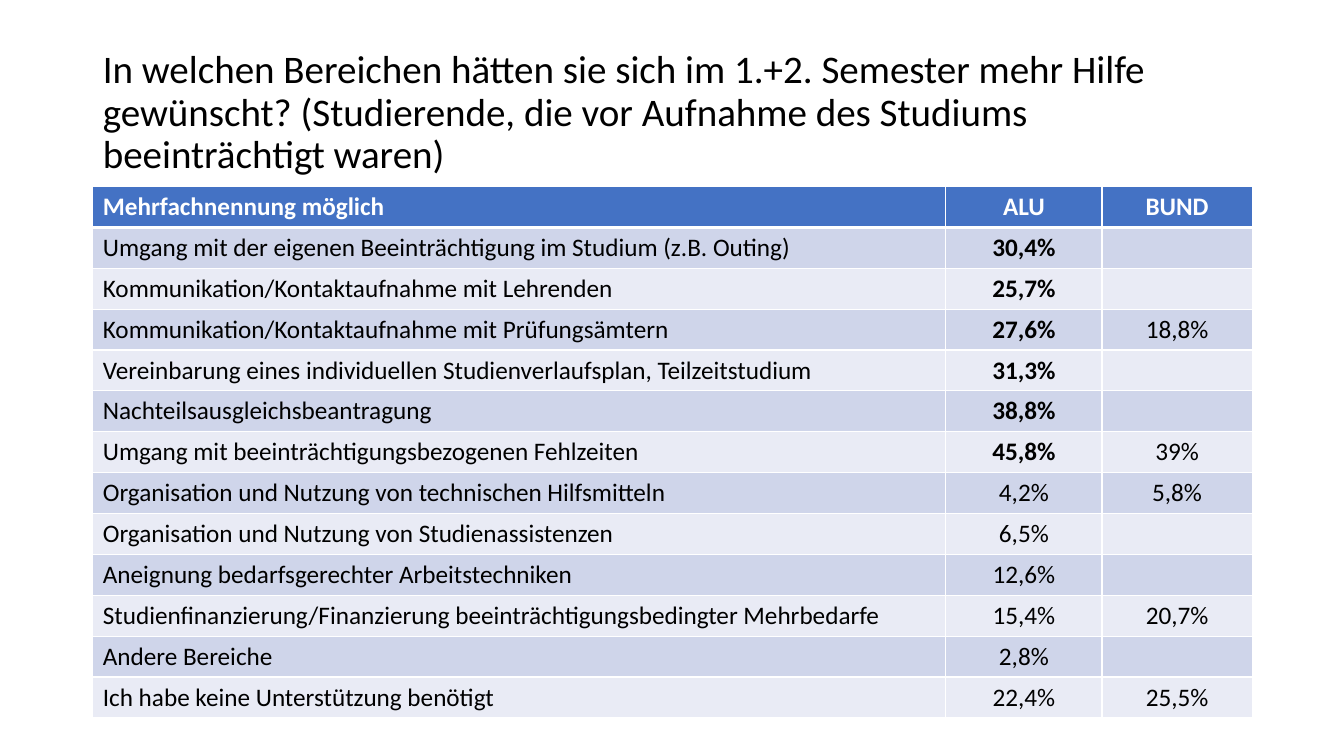
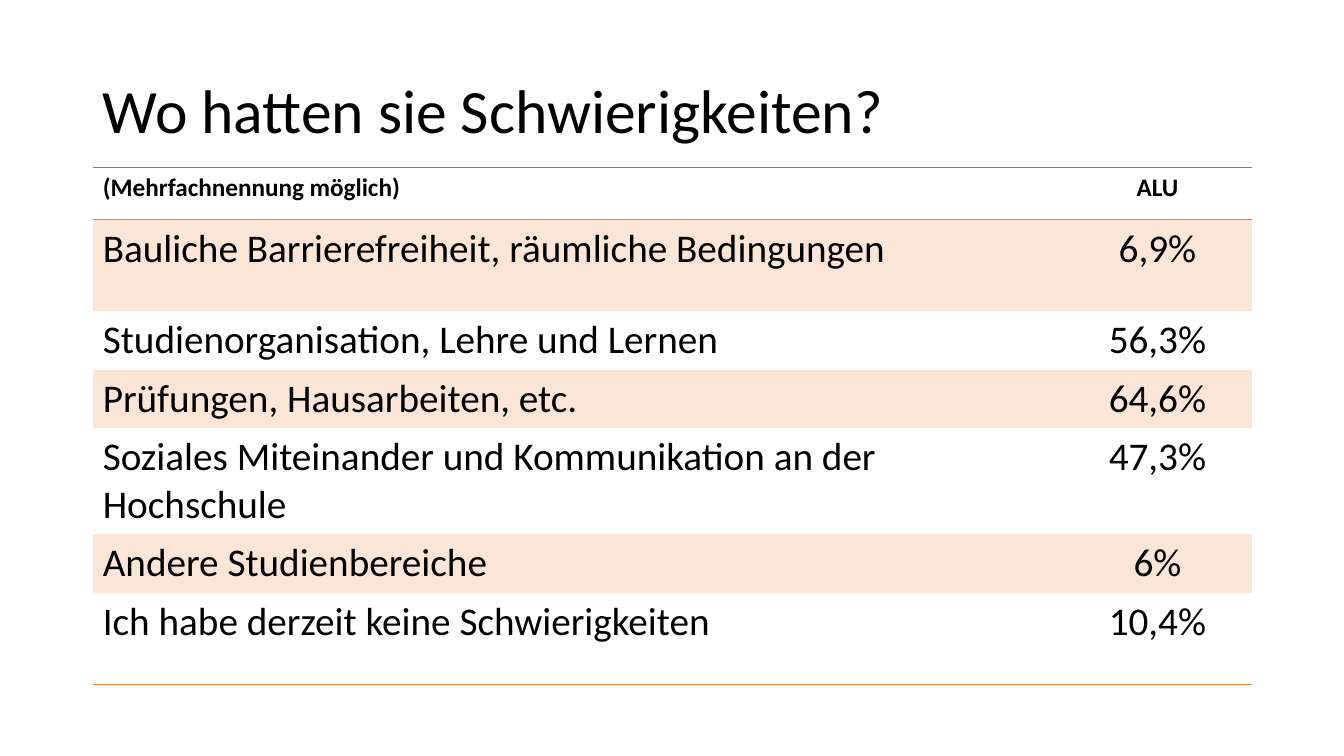
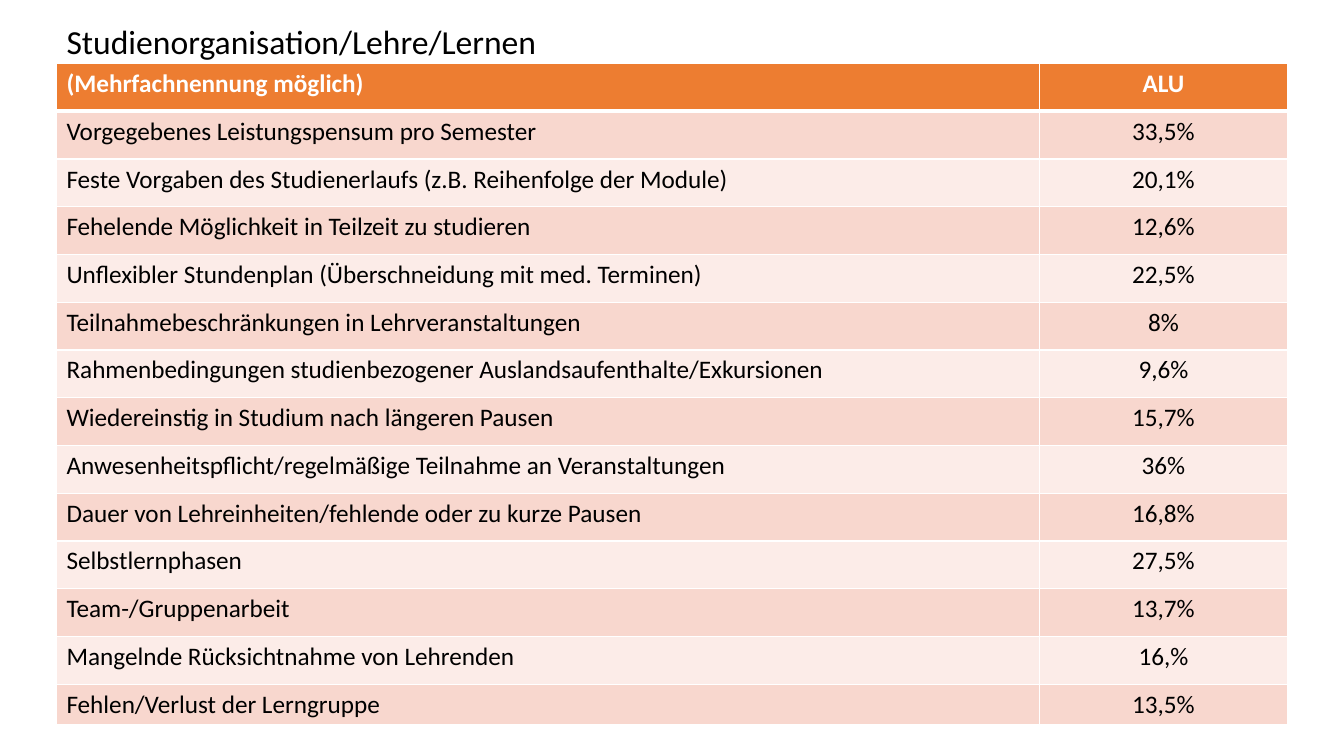
from lxml.etree import SubElement
from pptx import Presentation
from pptx.dml.color import RGBColor
from pptx.enum.text import MSO_ANCHOR, MSO_AUTO_SIZE, PP_ALIGN
from pptx.oxml.ns import qn
from pptx.util import Emu, Pt

EMU_PER_PX = 9144
FONT = "Calibri"
BLACK, WHITE, BLUE, ORANGE, GRAY = "000000", "FFFFFF", "4472C4", "ED7D31", "808080"
PLAIN_TABLE_STYLE = "{2D5ABB26-0587-4C30-8999-92F81FD0307C}"
SIDES = ("L", "R", "T", "B")

BLUE_GRID = {"header_fill": BLUE, "header_color": WHITE, "bands": ("CFD5EA", "E9EBF5"),
             "body_size": 18, "ruled": False}
ORANGE_GRID = {**BLUE_GRID, "header_fill": ORANGE, "bands": ("F8D7CE", "FCECE8")}
ORANGE_RULED = {"header_fill": None, "header_color": BLACK, "bands": ("FBE5D6", None),
                "body_size": 28, "ruled": True}

HELP_ROWS = [
    ("Mehrfachnennung möglich", "ALU", "BUND"),
    ("Umgang mit der eigenen Beeinträchtigung im Studium (z.B. Outing)", "30,4%", ""),
    ("Kommunikation/Kontaktaufnahme mit Lehrenden", "25,7%", ""),
    ("Kommunikation/Kontaktaufnahme mit Prüfungsämtern", "27,6%", "18,8%"),
    ("Vereinbarung eines individuellen Studienverlaufsplan, Teilzeitstudium", "31,3%", ""),
    ("Nachteilsausgleichsbeantragung", "38,8%", ""),
    ("Umgang mit beeinträchtigungsbezogenen Fehlzeiten", "45,8%", "39%"),
    ("Organisation und Nutzung von technischen Hilfsmitteln", "4,2%", "5,8%"),
    ("Organisation und Nutzung von Studienassistenzen", "6,5%", ""),
    ("Aneignung bedarfsgerechter Arbeitstechniken", "12,6%", ""),
    ("Studienfinanzierung/Finanzierung beeinträchtigungsbedingter Mehrbedarfe", "15,4%", "20,7%"),
    ("Andere Bereiche", "2,8%", ""),
    ("Ich habe keine Unterstützung benötigt", "22,4%", "25,5%"),
]
DIFFICULTY_ROWS = [
    ("(Mehrfachnennung möglich)", "ALU"),
    ("Bauliche Barrierefreiheit, räumliche Bedingungen", "6,9%"),
    ("Studienorganisation, Lehre und Lernen", "56,3%"),
    ("Prüfungen, Hausarbeiten, etc.", "64,6%"),
    ("Soziales Miteinander und Kommunikation an der Hochschule", "47,3%"),
    ("Andere Studienbereiche", "6%"),
    ("Ich habe derzeit keine Schwierigkeiten", "10,4%"),
]
ORGANISATION_ROWS = [
    ("(Mehrfachnennung möglich)", "ALU"),
    ("Vorgegebenes Leistungspensum pro Semester", "33,5%"),
    ("Feste Vorgaben des Studienerlaufs (z.B. Reihenfolge der Module)", "20,1%"),
    ("Fehelende Möglichkeit in Teilzeit zu studieren", "12,6%"),
    ("Unflexibler Stundenplan (Überschneidung mit med. Terminen)", "22,5%"),
    ("Teilnahmebeschränkungen in Lehrveranstaltungen", "8%"),
    ("Rahmenbedingungen studienbezogener Auslandsaufenthalte/Exkursionen", "9,6%"),
    ("Wiedereinstig in Studium nach längeren Pausen", "15,7%"),
    ("Anwesenheitspflicht/regelmäßige Teilnahme an Veranstaltungen", "36%"),
    ("Dauer von Lehreinheiten/fehlende oder zu kurze Pausen", "16,8%"),
    ("Selbstlernphasen", "27,5%"),
    ("Team-/Gruppenarbeit", "13,7%"),
    ("Mangelnde Rücksichtnahme von Lehrenden", "16,%"),
    ("Fehlen/Verlust der Lerngruppe", "13,5%"),
]


def px(length):
    return Emu(round(length * EMU_PER_PX))


def color(hex_string):
    return RGBColor.from_string(hex_string)


def set_attributes(target, values):
    for name, value in values.items():
        setattr(target, name, value)


def format_font(font, size, hex_string, bold=False):
    set_attributes(font, {"name": FONT, "size": Pt(size), "bold": bold})
    font.color.rgb = color(hex_string)


def place_title(slide, text, box, size):
    title = slide.shapes.title
    set_attributes(title, dict(zip(("left", "top", "width", "height"), map(px, box))))
    frame = title.text_frame
    set_attributes(frame, {"text": text, "word_wrap": True, "auto_size": MSO_AUTO_SIZE.NONE,
                           "vertical_anchor": MSO_ANCHOR.MIDDLE})
    paragraph = frame.paragraphs[0]
    set_attributes(paragraph, {"alignment": PP_ALIGN.LEFT, "line_spacing": 0.9})
    format_font(paragraph.runs[0].font, size, BLACK)


def cell_borders(row, last_row, ruled):
    if ruled:
        borders = {}
        if row == 0:
            borders["T"] = (GRAY, 0.75)
        if row == 1:
            borders["T"] = (ORANGE, 1)
        if row in (0, last_row):
            borders["B"] = (ORANGE, 1)
        return borders
    borders = dict.fromkeys(SIDES, (WHITE, 1))
    if row < 2:
        borders["B" if row == 0 else "T"] = (WHITE, 3)
    return borders


def draw_borders(cell, borders):
    properties = cell._tc.get_or_add_tcPr()
    for position, side in enumerate(SIDES):
        hex_string, width = borders.get(side, (None, 0))
        line = SubElement(properties, qn(f"a:ln{side}"), w=str(int(Pt(width))))
        properties.insert(position, line)
        if hex_string:
            fill = SubElement(line, qn("a:solidFill"))
            SubElement(fill, qn("a:srgbClr"), val=hex_string)
        else:
            SubElement(line, qn("a:noFill"))


def fill_cell(cell, hex_string):
    if hex_string:
        cell.fill.solid()
        cell.fill.fore_color.rgb = color(hex_string)
    else:
        cell.fill.background()


def place_table(slide, rows, origin, columns, heights, look, bold_rows=0):
    shape = slide.shapes.add_table(len(rows), len(columns), *map(px, origin),
                                   px(sum(columns)), px(sum(heights)))
    table = shape.table
    table._tbl.tblPr.find(qn("a:tableStyleId")).text = PLAIN_TABLE_STYLE
    table.horz_banding = False
    for column, width in zip(table.columns, columns):
        column.width = px(width)
    for row, (texts, height) in enumerate(zip(rows, heights)):
        table.rows[row].height = px(height)
        header = row == 0
        background = look["header_fill"] if header else look["bands"][(row - 1) % 2]
        size = 18 if header else look["body_size"]
        text_color = look["header_color"] if header else BLACK
        for column, text in enumerate(texts):
            cell = table.cell(row, column)
            cell.text = text
            paragraph = cell.text_frame.paragraphs[0]
            paragraph.alignment = PP_ALIGN.CENTER if column else PP_ALIGN.LEFT
            bold = header or (column == 1 and row <= bold_rows)
            for run in paragraph.runs:
                format_font(run.font, size, text_color, bold)
            fill_cell(cell, background)
            draw_borders(cell, cell_borders(row, len(rows) - 1, look["ruled"]))


def add_table_slide(presentation, title, table):
    slide = presentation.slides.add_slide(presentation.slide_layouts[5])
    place_title(slide, **title)
    place_table(slide, **table)


def main():
    presentation = Presentation()
    set_attributes(presentation, {"slide_width": px(1333), "slide_height": px(750)})
    title_box = (92, 40, 1150, 145)
    add_table_slide(
        presentation,
        {"text": "In welchen Bereichen hätten sie sich im 1.+2. Semester mehr Hilfe gewünscht? "
                 "(Studierende, die vor Aufnahme des Studiums beeinträchtigt waren)",
         "box": title_box, "size": 27.9},
        {"rows": HELP_ROWS, "origin": (92, 185), "columns": (846, 155, 149),
         "heights": [527 / 13] * 13, "look": BLUE_GRID, "bold_rows": 6})
    add_table_slide(
        presentation,
        {"text": "Wo hatten sie Schwierigkeiten?", "box": title_box, "size": 44},
        {"rows": DIFFICULTY_ROWS, "origin": (92, 166), "columns": (962, 188),
         "heights": (52, 91, 58, 58, 105, 58, 91), "look": ORANGE_RULED})
    add_table_slide(
        presentation,
        {"text": "Studienorganisation/Lehre/Lernen", "box": (56, -20, 1153, 126), "size": 24},
        {"rows": ORGANISATION_ROWS, "origin": (56, 63), "columns": (975, 246),
         "heights": [616 / 13] * 13 + [40], "look": ORANGE_GRID})
    presentation.save("out.pptx")


if __name__ == "__main__":
    main()
